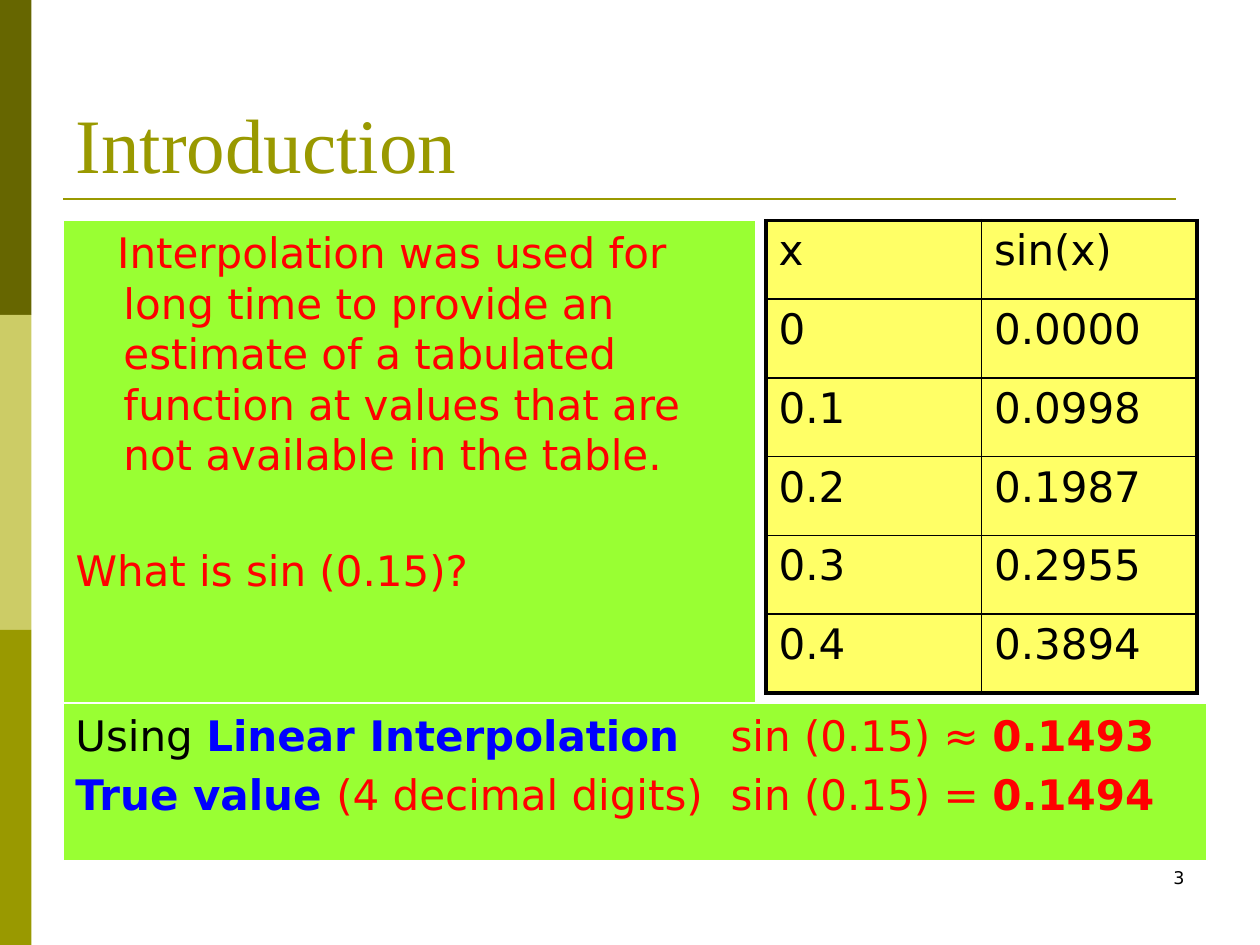
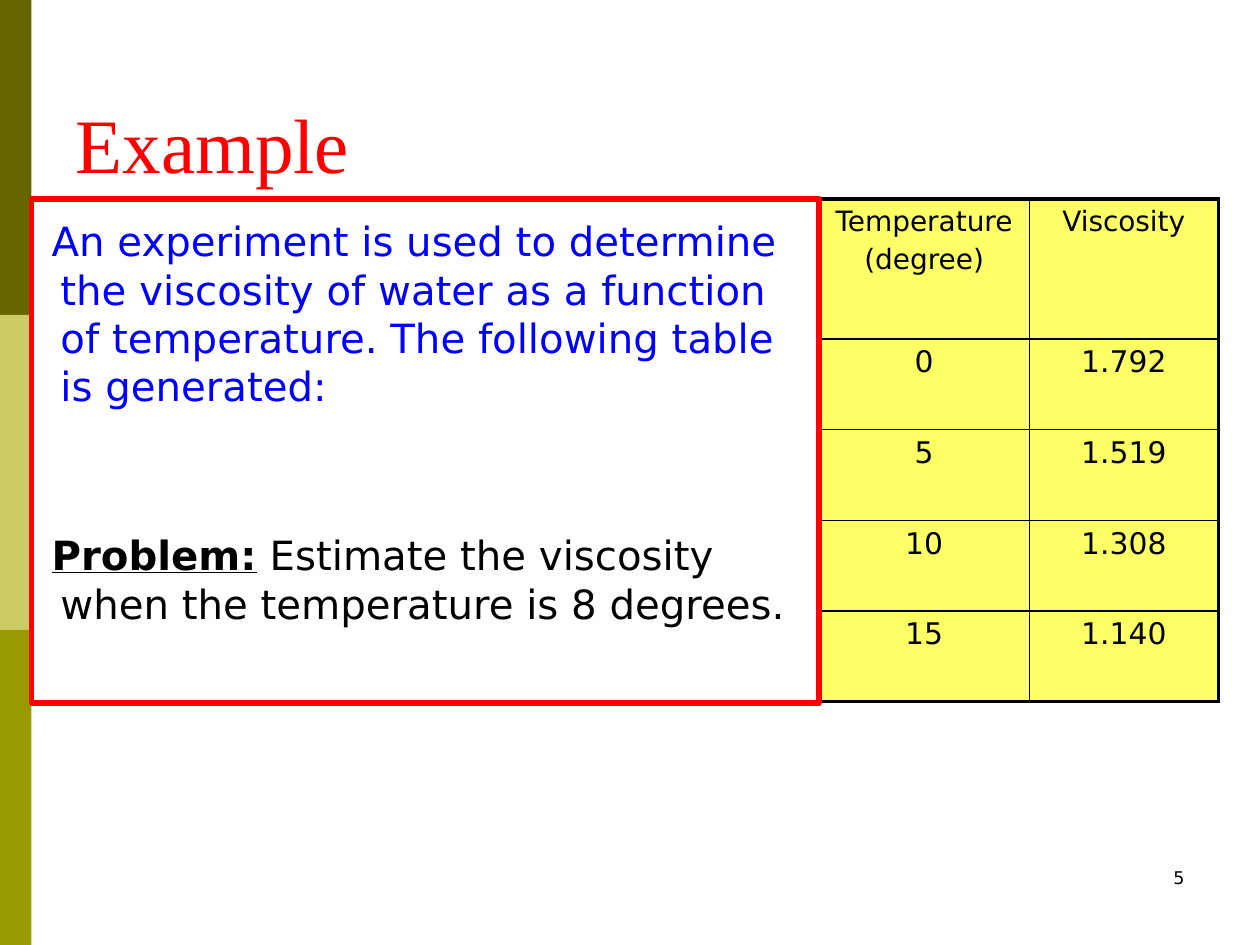
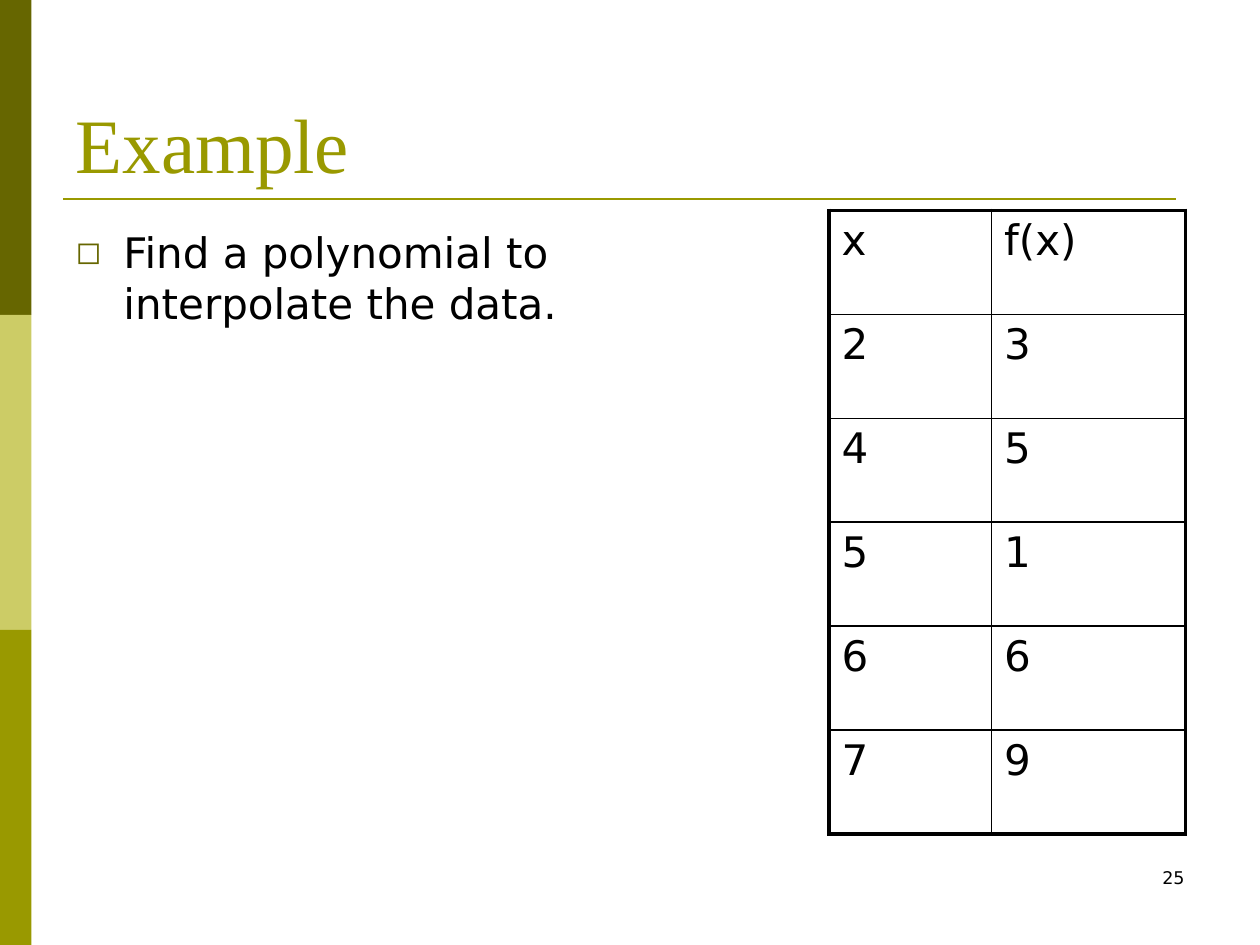
from pptx import Presentation
from pptx.dml.color import RGBColor
from pptx.enum.shapes import MSO_CONNECTOR, MSO_SHAPE
from pptx.enum.text import MSO_ANCHOR, MSO_AUTO_SIZE, PP_ALIGN
from pptx.oxml.ns import qn
from pptx.util import Inches, Pt
from lxml.etree import SubElement

BLACK = RGBColor(0x00, 0x00, 0x00)
WHITE = RGBColor(0xFF, 0xFF, 0xFF)
RED = RGBColor(0xFF, 0x00, 0x00)
BLUE = RGBColor(0x00, 0x00, 0xFF)
OLIVE = RGBColor(0x99, 0x99, 0x00)
DARK_OLIVE = RGBColor(0x66, 0x66, 0x00)
PALE_OLIVE = RGBColor(0xCC, 0xCC, 0x66)
LIME = RGBColor(0x99, 0xFF, 0x33)
YELLOW = RGBColor(0xFF, 0xFF, 0x66)

TITLE_FONT = "Times New Roman"
BODY_FONT = "DejaVu Sans"
HANG = 0.38


def place(shape, left, top, width, height):
    """Move and size a shape, in inches."""
    shape.left, shape.top = Inches(left), Inches(top)
    shape.width, shape.height = Inches(width), Inches(height)


def add_run(p, text, size, color=BLACK, bold=False, underline=False, font=BODY_FONT):
    """Append one formatted run."""
    r = p.add_run()
    r.text = text
    r.font.name, r.font.size = font, Pt(size)
    r.font.bold, r.font.underline = bold, underline
    r.font.color.rgb = color


def add_para(tf, runs, size, before=0, align=PP_ALIGN.LEFT):
    """Fill the first empty paragraph or a new one with runs."""
    p = tf.paragraphs[0] if not tf.paragraphs[0].runs else tf.add_paragraph()
    p.alignment, p.space_before = align, Pt(before)
    for run in runs:
        add_run(p, run[0], size, *run[1:])
    return p


def set_indent(p, margin, first, bullet=None):
    """Set the hanging indent and the bullet of a paragraph."""
    pPr = p._p.get_or_add_pPr()
    pPr.set("marL", str(Inches(margin)))
    pPr.set("indent", str(Inches(first)))
    if bullet is None:
        SubElement(pPr, qn("a:buNone"))
        return
    color = SubElement(pPr, qn("a:buClr"))
    SubElement(color, qn("a:srgbClr"), val=str(DARK_OLIVE))
    SubElement(pPr, qn("a:buSzPct"), val="75000")
    SubElement(pPr, qn("a:buFont"), typeface=BODY_FONT)
    SubElement(pPr, qn("a:buChar"), char=bullet)


def set_tab(p, position):
    """Give a paragraph one left tab stop."""
    tabs = SubElement(p._p.get_or_add_pPr(), qn("a:tabLst"))
    SubElement(tabs, qn("a:tab"), pos=str(Inches(position)), algn="l")


def add_rect(s, box, fill=None, line=None, width=0.75):
    """Add a rectangle with optional fill and outline."""
    rect = s.shapes.add_shape(MSO_SHAPE.RECTANGLE, *map(Inches, box))
    rect.shadow.inherit = False
    style(rect, fill, line, width)
    return rect


def style(shape, fill, line, width=0.75):
    """Set the fill and outline of a shape."""
    if fill is None:
        shape.fill.background()
    else:
        shape.fill.solid()
        shape.fill.fore_color.rgb = fill
    if line is None:
        shape.line.fill.background()
    else:
        shape.line.color.rgb = line
        shape.line.width = Pt(width)


def add_slide(prs, title, number, title_color=OLIVE):
    """Add a slide with side bands, title rule, title and number."""
    s = prs.slides.add_slide(prs.slide_layouts[1])
    for i, color in enumerate((DARK_OLIVE, PALE_OLIVE, OLIVE)):
        add_rect(s, (0, 2.5 * i, 0.25, 2.5), color)
    rule = s.shapes.add_connector(
        MSO_CONNECTOR.STRAIGHT, Inches(0.5), Inches(1.58), Inches(9.33), Inches(1.58))
    rule.line.color.rgb, rule.line.width = OLIVE, Pt(1.5)
    SubElement(rule._element.spPr, qn("a:effectLst"))

    place(s.shapes.title, 0.5, 0.3, 9, 1.25)
    tf = s.shapes.title.text_frame
    tf.vertical_anchor, tf.auto_size = MSO_ANCHOR.BOTTOM, MSO_AUTO_SIZE.NONE
    add_para(tf, [(title, title_color, False, False, TITLE_FONT)], 44)

    box = s.shapes.add_textbox(Inches(7.17), Inches(6.83), Inches(2.33), Inches(0.5))
    box.text_frame.word_wrap = True
    add_para(box.text_frame, [(str(number),)], 10, align=PP_ALIGN.RIGHT)
    return s


def get_body(s, *box):
    """Place the body placeholder and return it."""
    body = s.placeholders[1]
    place(body, *box)
    body.text_frame.auto_size = MSO_AUTO_SIZE.NONE
    body.text_frame.vertical_anchor = MSO_ANCHOR.TOP
    return body


def set_borders(cell, at_edges):
    """Draw thick borders at table edges and thin ones inside."""
    tcPr = cell._tc.get_or_add_tcPr()
    for side, at_edge in zip("LRTB", at_edges):
        ln = SubElement(tcPr, qn(f"a:ln{side}"), w=str(Pt(2.25 if at_edge else 1)))
        fill = SubElement(ln, qn("a:solidFill"))
        SubElement(fill, qn("a:srgbClr"), val=str(BLACK))


def add_grid(s, left, top, widths, heights, rows, fill=None, sizes=(24, 24),
             align=PP_ALIGN.LEFT):
    """Add a bordered table; sizes are for the header and the data."""
    n_rows, n_cols = len(rows), len(widths)
    table = s.shapes.add_table(
        n_rows, n_cols, Inches(left), Inches(top),
        Inches(sum(widths)), Inches(sum(heights))).table
    table.first_row = table.horz_banding = False
    for col, width in zip(table.columns, widths):
        col.width = Inches(width)
    for i, (height, row) in enumerate(zip(heights, rows)):
        table.rows[i].height = Inches(height)
        for j, text in enumerate(row):
            cell = table.cell(i, j)
            set_borders(cell, (j == 0, j == n_cols - 1, i == 0, i == n_rows - 1))
            if fill is None:
                cell.fill.background()
            else:
                cell.fill.solid()
                cell.fill.fore_color.rgb = fill
            size = sizes[0] if i == 0 else sizes[1]
            for k, line in enumerate(text.split("\n")):
                add_para(cell.text_frame, [(line,)], size, 0.2 * size * (k > 0), align)


def add_introduction(prs):
    """Build the slide that motivates interpolation."""
    s = add_slide(prs, "Introduction", 3)
    body = get_body(s, 0.5, 1.75, 5.5, 3.83)
    style(body, LIME, WHITE)
    tf = body.text_frame
    p = add_para(tf, [(
        "Interpolation was used for long time to provide an estimate of a tabulated "
        "function at values that are not available in the table.", RED)], 24)
    set_indent(p, HANG, -0.05)
    p = add_para(tf, [("What is sin (0.15)?", RED)], 24, 37.5)
    set_indent(p, HANG, -HANG)

    add_grid(s, 6.08, 1.75, [1.71] * 2, [0.625] * 6, [
        ("x", "sin(x)"), ("0", "0.0000"), ("0.1", "0.0998"),
        ("0.2", "0.1987"), ("0.3", "0.2955"), ("0.4", "0.3894")], YELLOW)

    result = add_rect(s, (0.5, 5.58, 9.08, 1.25), LIME, WHITE)
    tf = result.text_frame
    tf.word_wrap, tf.vertical_anchor = True, MSO_ANCHOR.TOP
    lines = [
        [("Using ",), ("Linear Interpolation", BLUE, True),
         ("\tsin (0.15) ≈ ", RED), ("0.1493", RED, True)],
        [("True value ", BLUE, True), ("(4 decimal digits)\tsin (0.15) = ", RED),
         ("0.1494", RED, True)]]
    for i, runs in enumerate(lines):
        set_tab(add_para(tf, runs, 24, 4.8 * i), 5.2)


def add_viscosity(prs):
    """Build the water viscosity example."""
    s = add_slide(prs, "Example", 5, RED)
    tf = get_body(s, 0, 1.67, 6.42, 3.83).text_frame
    p = add_para(tf, [(
        "An experiment is used to determine the viscosity of water as a function "
        "of temperature. The following table is generated:", BLUE)], 23)
    set_indent(p, HANG, -0.07)
    p = add_para(tf, [
        ("Problem:", BLACK, True, True),
        (" Estimate the viscosity when the temperature is 8 degrees.",)], 23, 69)
    set_indent(p, HANG, -0.07)

    add_grid(s, 6.5, 1.58, [1.67, 1.5], [1.11] + [0.72] * 4, [
        ("Temperature\n(degree)", "Viscosity"), ("0", "1.792"), ("5", "1.519"),
        ("10", "1.308"), ("15", "1.140")], YELLOW, (16, 17), PP_ALIGN.CENTER)
    add_rect(s, (0.25, 1.58, 6.25, 4), line=RED, width=3)


def add_polynomial(prs):
    """Build the polynomial interpolation example."""
    s = add_slide(prs, "Example", 25)
    tf = get_body(s, 0.5, 1.75, 4.42, 4.95).text_frame
    p = add_para(tf, [("Find a polynomial to interpolate the data.",)], 24)
    set_indent(p, HANG, -HANG, "◻")
    add_grid(s, 6.58, 1.67, [1.29, 1.54], [0.825] * 6, [
        ("x", "f(x)"), ("2", "3"), ("4", "5"), ("5", "1"), ("6", "6"), ("7", "9")])


def main():
    """Build and save the presentation."""
    prs = Presentation()
    prs.slide_width, prs.slide_height = Inches(10), Inches(7.5)
    add_introduction(prs)
    add_viscosity(prs)
    add_polynomial(prs)
    prs.save("out.pptx")


if __name__ == "__main__":
    main()
